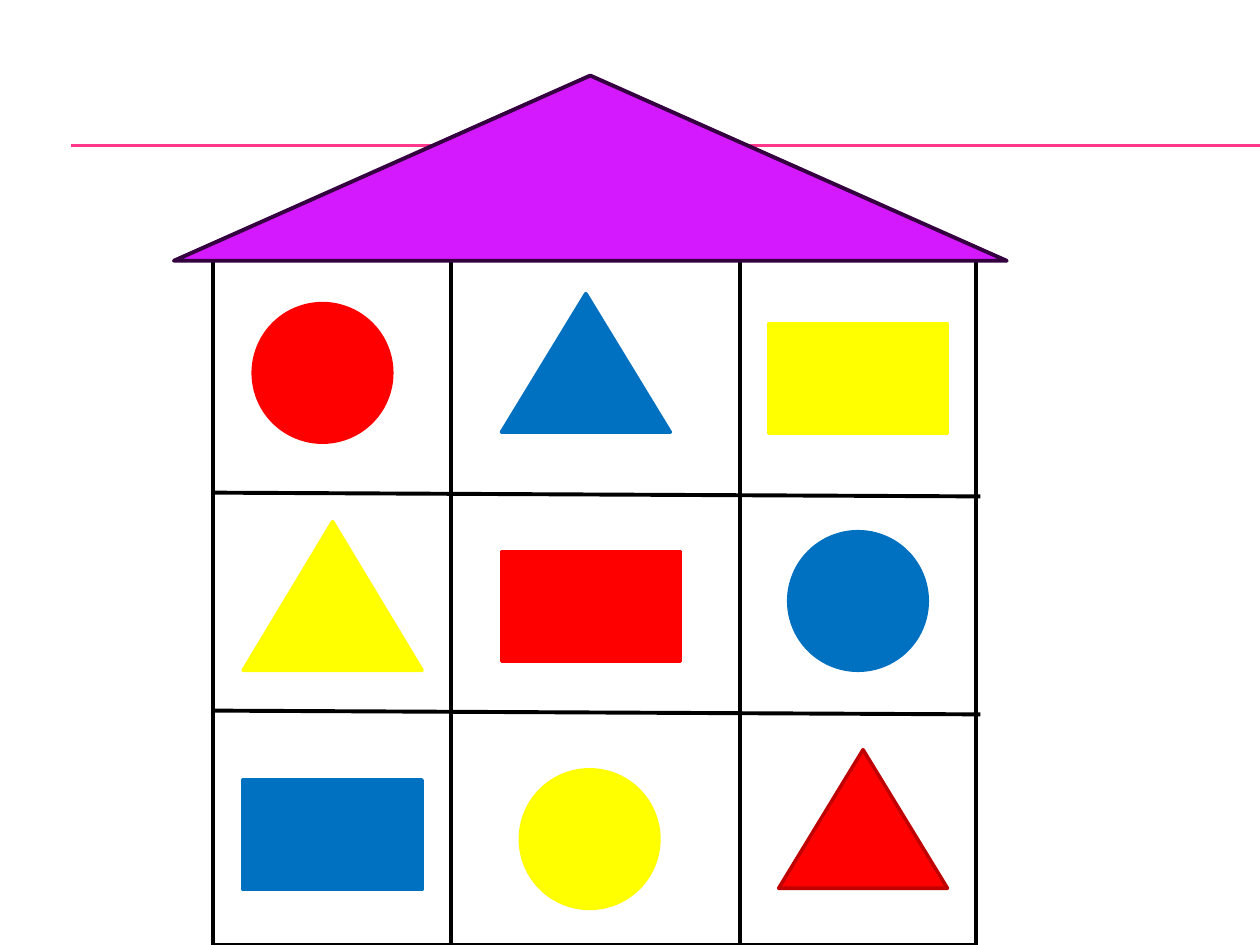
from pptx import Presentation
from pptx.dml.color import RGBColor
from pptx.enum.shapes import MSO_CONNECTOR, MSO_SHAPE
from pptx.oxml.ns import qn
from pptx.util import Inches, Pt
from lxml.etree import SubElement

THEME = {
    "red": "FF0000", "dark red": "C00000", "blue": "0070C0", "yellow": "FFFF00",
    "white": "FFFFFF", "black": "000000", "pink": "FF388C",
    "purple": "D519FF", "dark purple": "340040",
    "rule width": 0.75, "wall width": 2.25, "figure width": 2,
}

# House: left, top, width, height
WALLS = (1.69, 2.03, 6.06, 5.47)
ROOF = (1.38, 0.6, 6.61, 1.47)
COLUMN_EDGES = (3.58, 5.87)
FLOOR_EDGES = (3.91, 5.64)
FLOOR_END, FLOOR_SLOPE = 7.78, 0.03
RULE_LEFT, RULE_TOPS = 0.56, (1.15, 1.16)

# Figures: kind -> preset and usual size
FIGURES = {
    "circle": (MSO_SHAPE.OVAL, (1.1, 1.1)),
    "triangle": (MSO_SHAPE.ISOSCELES_TRIANGLE, (1.34, 1.1)),
    "large triangle": (MSO_SHAPE.ISOSCELES_TRIANGLE, (1.42, 1.18)),
    "rectangle": (MSO_SHAPE.RECTANGLE, (1.42, 0.87)),
}

# Rooms, floor by floor: figure, fill, outline, left, top
ROOMS = [
    [("circle", "red", "red", 2.01, 2.41),
     ("triangle", "blue", "blue", 3.98, 2.33),
     ("rectangle", "yellow", "yellow", 6.1, 2.57)],
    [("large triangle", "yellow", "yellow", 1.93, 4.14),
     ("rectangle", "red", "red", 3.98, 4.38),
     ("circle", "blue", "blue", 6.26, 4.22)],
    [("rectangle", "blue", "blue", 1.93, 6.19),
     ("circle", "yellow", "yellow", 4.13, 6.11),
     ("triangle", "red", "dark red", 6.18, 5.95)],
]


def color(name):
    return RGBColor.from_string(THEME[name])


def set_line(line, name, width):
    line.color.rgb = color(name)
    line.width = Pt(THEME[width])


def add_figure(slide, preset, box, fill, outline, width):
    figure = slide.shapes.add_shape(preset, *map(Inches, box))
    figure.shadow.inherit = False
    figure.fill.solid()
    figure.fill.fore_color.rgb = color(fill)
    set_line(figure.line, outline, width)


def add_line(slide, start, end, name="black", width="wall width"):
    line = slide.shapes.add_connector(
        MSO_CONNECTOR.STRAIGHT, *map(Inches, (*start, *end)))
    set_line(line.line, name, width)
    SubElement(line._element.spPr, qn("a:effectLst"))


def main():
    deck = Presentation()
    deck.slide_width, deck.slide_height = Inches(10), Inches(7.5)
    slide = deck.slides.add_slide(deck.slide_layouts[6])

    # Background rules
    for top in RULE_TOPS:
        add_line(slide, (RULE_LEFT, top), (10, top), "pink", "rule width")

    # Walls, columns, roof and floors
    left, top, _, height = WALLS
    add_figure(slide, MSO_SHAPE.RECTANGLE, WALLS, "white", "black", "wall width")
    for x in COLUMN_EDGES:
        add_line(slide, (x, top), (x, top + height))
    add_figure(slide, MSO_SHAPE.ISOSCELES_TRIANGLE, ROOF,
               "purple", "dark purple", "wall width")
    for y in FLOOR_EDGES:
        add_line(slide, (left, y), (FLOOR_END, y + FLOOR_SLOPE))

    # One figure per room
    for floor in ROOMS:
        for kind, fill, outline, x, y in floor:
            preset, size = FIGURES[kind]
            add_figure(slide, preset, (x, y, *size), fill, outline, "figure width")

    deck.save("out.pptx")


if __name__ == "__main__":
    main()
